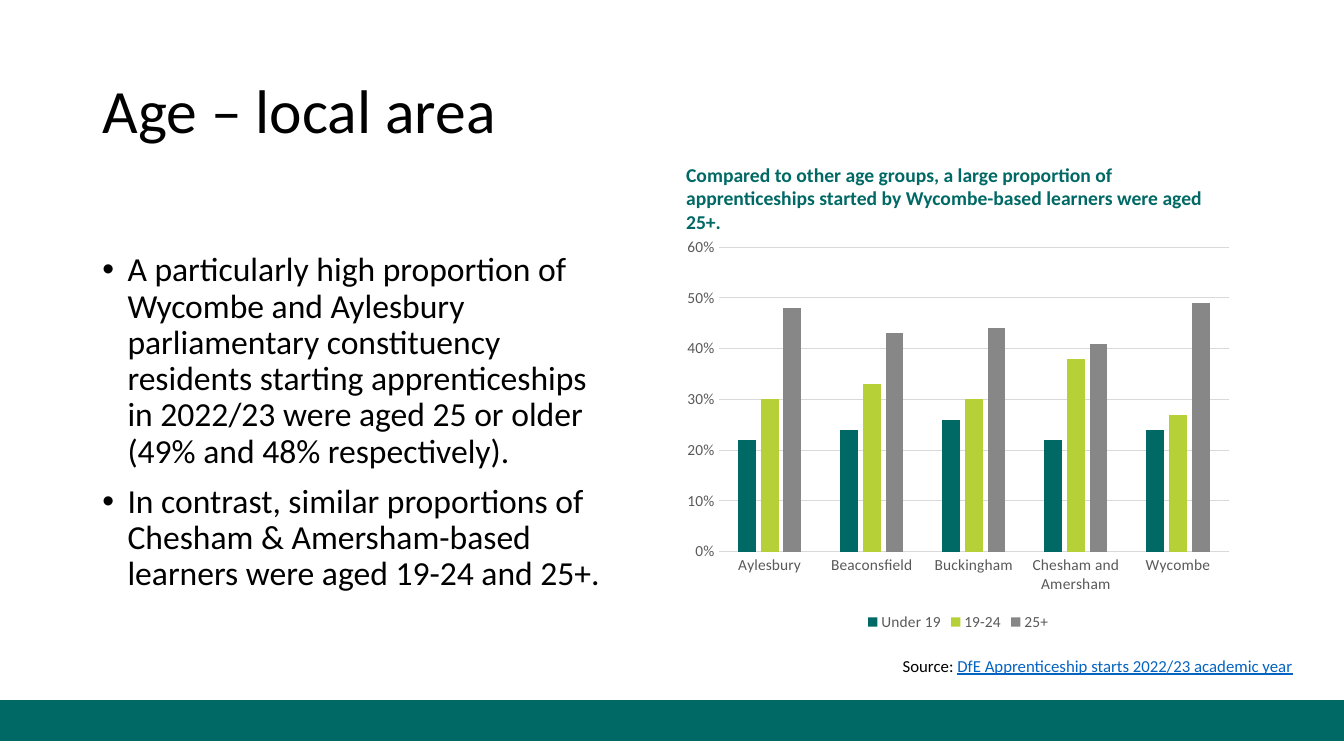
from dataclasses import dataclass

from lxml import etree
from pptx import Presentation
from pptx.chart.data import CategoryChartData
from pptx.dml.color import RGBColor
from pptx.enum.chart import XL_CHART_TYPE, XL_LEGEND_POSITION, XL_TICK_MARK
from pptx.enum.shapes import MSO_SHAPE
from pptx.enum.text import MSO_ANCHOR, PP_ALIGN
from pptx.oxml.ns import qn
from pptx.util import Pt

FONT = "Calibri"
TEAL, LIME, GREY = "006965", "B5D137", "878787"
BLACK, LINK_BLUE = "000000", "0563C1"
AXIS_TEXT, GRID_LINE = "595959", "D9D9D9"


@dataclass(frozen=True)
class Box:
    left: float
    top: float
    width: float
    height: float

    def lengths(self) -> tuple:
        return Pt(self.left), Pt(self.top), Pt(self.width), Pt(self.height)


@dataclass(frozen=True)
class TextRun:
    text: str
    size: float
    color: str = BLACK
    bold: bool = False
    underline: bool = False


@dataclass(frozen=True)
class AgeGroup:
    name: str
    color: str
    shares: tuple


TITLE_BOX = Box(66, 28.8, 828, 104.4)
FINDINGS_BOX = Box(66, 177, 377.5, 309)
CHART_BOX = Box(483, 164, 403, 290)
CAPTION_BOX = Box(483, 112.5, 411, 41)
SOURCE_BOX = Box(633.5, 464.5, 297, 21.8)
BAND_BOX = Box(0, 500.4, 960, 28.8)

FINDINGS = (
    "A particularly high proportion of Wycombe and Aylesbury parliamentary constituency "
    "residents starting apprenticeships in 2022/23 were aged 25 or older "
    "(49% and 48% respectively).",
    "In contrast, similar proportions of Chesham & Amersham-based learners "
    "were aged 19-24 and 25+.",
)
CAPTION = TextRun(
    "Compared to other age groups, a large proportion of apprenticeships "
    "started by Wycombe-based learners were aged 25+.", 14, TEAL, bold=True)
SOURCE = (
    TextRun("Source: ", 12),
    TextRun("DfE Apprenticeship starts 2022/23 academic year", 12, LINK_BLUE, underline=True),
)

AREAS = ("Aylesbury", "Beaconsfield", "Buckingham", "Chesham and Amersham", "Wycombe")
AGE_GROUPS = (
    AgeGroup("Under 19", TEAL, (0.22, 0.24, 0.26, 0.22, 0.24)),
    AgeGroup("19-24", LIME, (0.30, 0.33, 0.30, 0.38, 0.27)),
    AgeGroup("25+", GREY, (0.48, 0.43, 0.44, 0.41, 0.49)),
)


def rgb(color: str) -> RGBColor:
    return RGBColor.from_string(color)


def style_font(font, size: float, color: str) -> None:
    font.name = FONT
    font.size = Pt(size)
    font.color.rgb = rgb(color)


def add_runs(paragraph, *runs: TextRun) -> None:
    for item in runs:
        run = paragraph.add_run()
        run.text = item.text
        style_font(run.font, item.size, item.color)
        run.font.bold = item.bold
        run.font.underline = item.underline


def add_text_frame(slide, box: Box):
    text_frame = slide.shapes.add_textbox(*box.lengths()).text_frame
    text_frame.word_wrap = True
    return text_frame


def add_bullet(paragraph, indent: float) -> None:
    properties = paragraph._p.get_or_add_pPr()
    properties.set("marL", str(Pt(indent)))
    properties.set("indent", str(-Pt(indent)))
    etree.SubElement(properties, qn("a:buFont")).set("typeface", "Arial")
    etree.SubElement(properties, qn("a:buChar")).set("char", "•")


def add_band(slide) -> None:
    band = slide.shapes.add_shape(MSO_SHAPE.RECTANGLE, *BAND_BOX.lengths())
    band.shadow.inherit = False
    band.fill.solid()
    band.fill.fore_color.rgb = rgb(TEAL)
    band.line.color.rgb = rgb(TEAL)
    band.line.width = Pt(1)


def format_title(slide) -> None:
    title = slide.shapes.title
    title.left, title.top, title.width, title.height = TITLE_BOX.lengths()
    title.text_frame.vertical_anchor = MSO_ANCHOR.MIDDLE
    paragraph = title.text_frame.paragraphs[0]
    paragraph.alignment = PP_ALIGN.LEFT
    paragraph.line_spacing = 0.9
    add_runs(paragraph, TextRun("Age – local area", 44))


def add_findings(slide) -> None:
    text_frame = add_text_frame(slide, FINDINGS_BOX)
    for index, finding in enumerate(FINDINGS):
        paragraph = text_frame.add_paragraph() if index else text_frame.paragraphs[0]
        paragraph.line_spacing = 0.9
        paragraph.space_before = Pt(10)
        add_bullet(paragraph, 18)
        add_runs(paragraph, TextRun(finding, 24))


def style_line(line) -> None:
    line.color.rgb = rgb(GRID_LINE)
    line.width = Pt(0.75)


def add_age_chart(slide) -> None:
    data = CategoryChartData(number_format="0%")
    data.categories = AREAS
    for group in AGE_GROUPS:
        data.add_series(group.name, group.shares)
    chart = slide.shapes.add_chart(
        XL_CHART_TYPE.COLUMN_CLUSTERED, *CHART_BOX.lengths(), data).chart
    style_font(chart.font, 10, BLACK)
    chart.has_title = False
    chart.has_legend = True
    chart.legend.position = XL_LEGEND_POSITION.BOTTOM
    chart.legend.include_in_layout = False
    style_font(chart.legend.font, 11, AXIS_TEXT)

    plot = chart.plots[0]
    plot.vary_by_categories = False
    plot.gap_width = 219
    plot.overlap = -27
    for series, group in zip(plot.series, AGE_GROUPS):
        series.format.fill.solid()
        series.format.fill.fore_color.rgb = rgb(group.color)

    for axis in (chart.category_axis, chart.value_axis):
        axis.major_tick_mark = axis.minor_tick_mark = XL_TICK_MARK.NONE
        style_font(axis.tick_labels.font, 11, AXIS_TEXT)
    style_line(chart.category_axis.format.line)
    value_axis = chart.value_axis
    value_axis.minimum_scale, value_axis.maximum_scale, value_axis.major_unit = 0, 0.6, 0.1
    value_axis.tick_labels.number_format = "0%"
    value_axis.tick_labels.number_format_is_linked = False
    value_axis.format.line.fill.background()
    style_line(value_axis.major_gridlines.format.line)


def add_source(slide) -> None:
    paragraph = add_text_frame(slide, SOURCE_BOX).paragraphs[0]
    paragraph.alignment = PP_ALIGN.RIGHT
    add_runs(paragraph, *SOURCE)


def main() -> None:
    presentation = Presentation()
    presentation.slide_width, presentation.slide_height = Pt(960), Pt(540)
    slide = presentation.slides.add_slide(presentation.slide_layouts[5])
    add_band(slide)
    format_title(slide)
    add_findings(slide)
    add_age_chart(slide)
    add_source(slide)
    add_runs(add_text_frame(slide, CAPTION_BOX).paragraphs[0], CAPTION)
    presentation.save("out.pptx")


if __name__ == "__main__":
    main()
